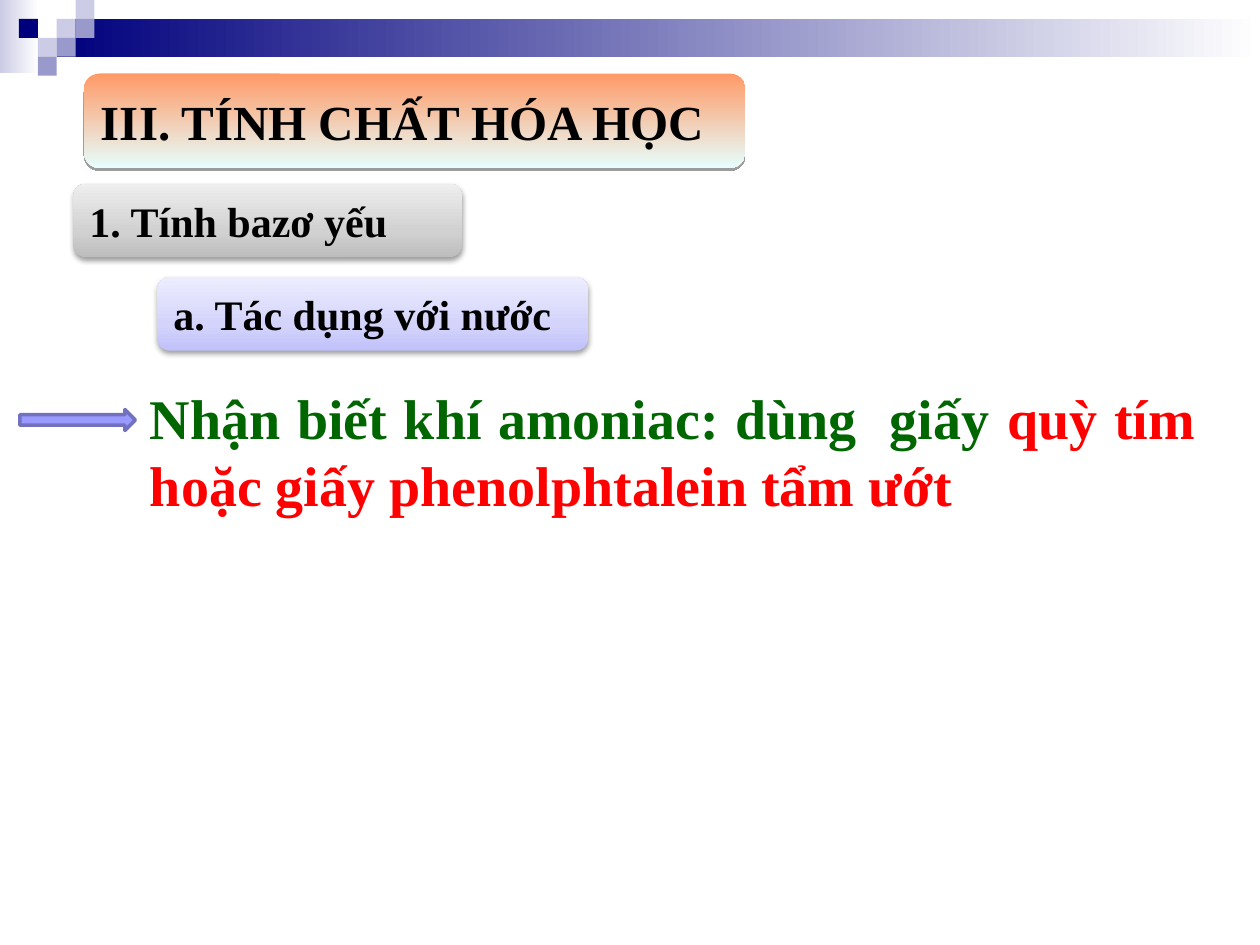
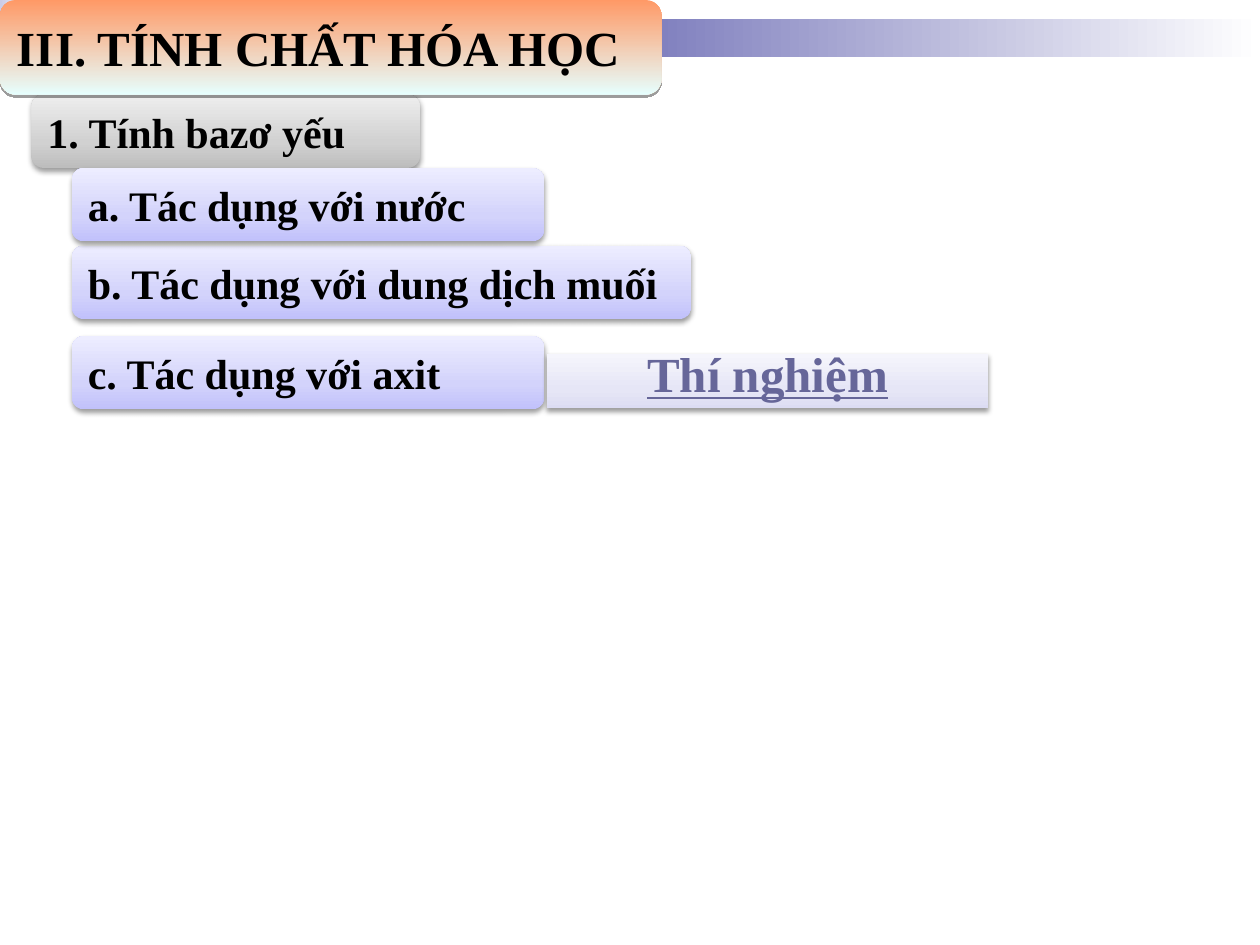
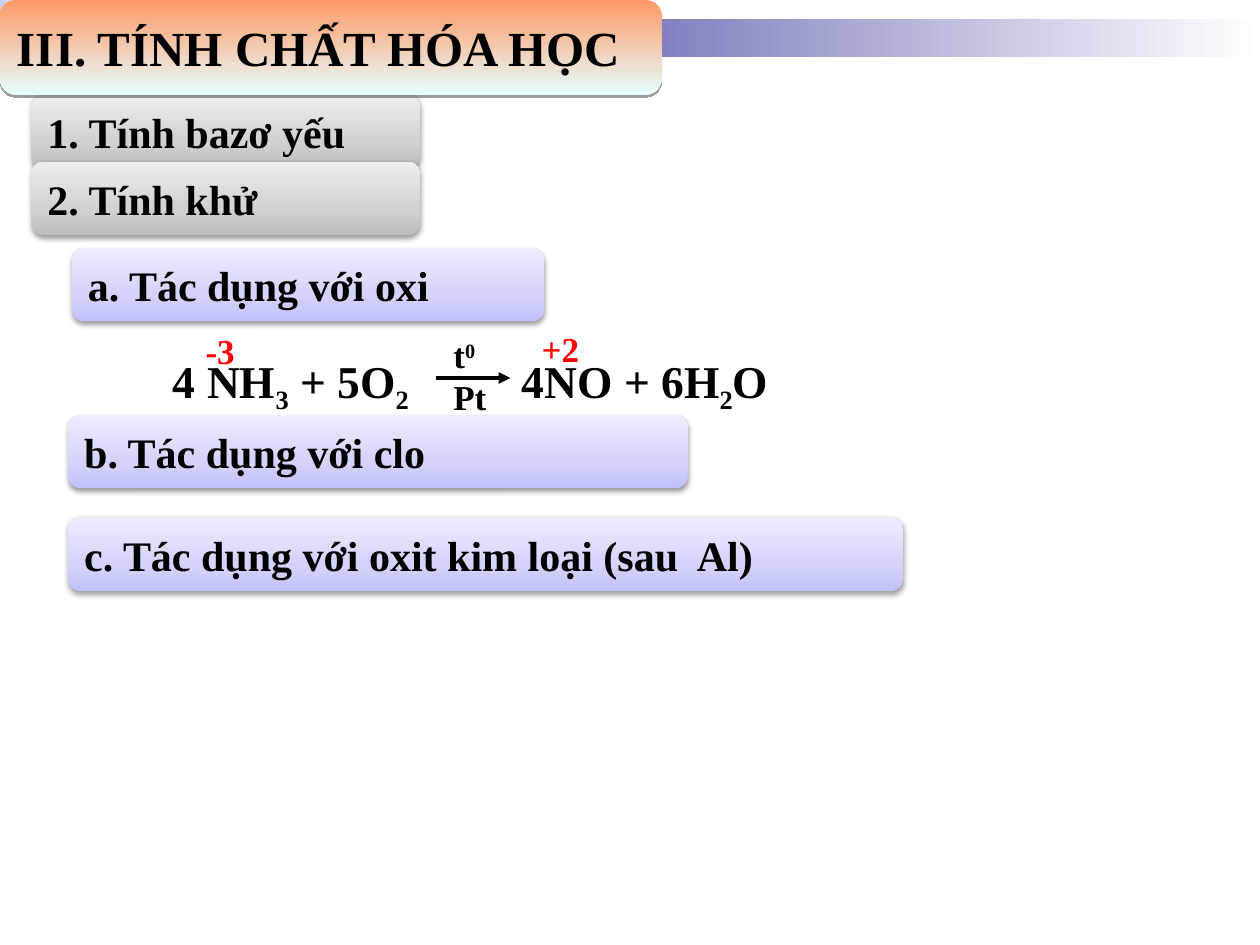
from dataclasses import dataclass

from pptx import Presentation
from pptx import util as u
from pptx.dml.color import RGBColor
from pptx.enum import shapes, text
from pptx.oxml import parse_xml
from pptx.oxml.ns import nsdecls, qn


@dataclass(frozen=True)
class Theme:
    font = "Times New Roman"
    black, red, green = "000000", "FF0000", "006600"
    navy, lilac, violet, slate = "00007D", "CCCCE6", "9999CC", "666699"
    arrow, arrow_edge = "9999FF", "7171BD"
    fade = [(0, lilac), (100, "FFFFFF")]
    band = [(0, navy), (100, "FFFFFF")]
    chapter = [(0, "FF9966"), (100, "E6FEFD")]
    section = [(0, "BDBDBD"), (35, "D1D1D1"), (100, "EEEEEE")]
    topic = [(0, "C1C1FB"), (35, "D3D3FB"), (100, "EDEDFF")]
    experiment = [(0, "DCDCF3"), (35, "E6E6F6"), (100, "F5F5FC")]
    chapter_size, section_size = 28, 24
    statement_size, equation_size, note_size = 32, 26, 20


theme = Theme()
deck = Presentation()
deck.slide_width, deck.slide_height = u.Inches(10), u.Inches(7.5)
column, row = deck.slide_width / 120, deck.slide_height / 90
rect = shapes.MSO_SHAPE.RECTANGLE
rounded = shapes.MSO_SHAPE.ROUNDED_RECTANGLE
middle, bottom = text.MSO_ANCHOR.MIDDLE, text.MSO_ANCHOR.BOTTOM
left, center, justify = text.PP_ALIGN.LEFT, text.PP_ALIGN.CENTER, text.PP_ALIGN.JUSTIFY

styles = {
    "chapter": dict(form=rounded, stops=theme.chapter, angle=90, blur=0, size=theme.chapter_size),
    "section": dict(form=rounded, stops=theme.section, angle=270, blur=3.1, size=theme.section_size),
    "topic": dict(form=rounded, stops=theme.topic, angle=270, blur=3.1, size=theme.section_size),
    "experiment": dict(form=rect, stops=theme.experiment, angle=270, blur=3.1,
                       size=theme.chapter_size, anchor=bottom, align=center,
                       color=theme.slate, underline=True),
    "fade": dict(form=rect, stops=theme.fade, angle=0),
    "band": dict(form=rect, stops=theme.band, angle=0),
    "statement": dict(size=theme.statement_size, align=justify),
    "equation": dict(size=theme.equation_size),
    "note": dict(size=theme.note_size),
}


def write(frame, paragraphs, style):
    frame.word_wrap = True
    for index, runs in enumerate(paragraphs):
        paragraph = frame.paragraphs[0] if index == 0 else frame.add_paragraph()
        paragraph.alignment = style.get("align", left)
        for words, color, baseline in runs:
            run = paragraph.add_run()
            run.text = words
            look = dict(name=theme.font, size=u.Pt(style["size"]), bold=True,
                        underline=style.get("underline"))
            for attribute, value in look.items():
                setattr(run.font, attribute, value)
            run.font.color.rgb = RGBColor.from_string(color)
            if baseline:
                run.font._element.set("baseline", str(baseline * 1000))


def place(slide, kind, box, content=None):
    style = styles[kind]
    x, y, width, height = box
    area = [u.Emu(round(v)) for v in (x * column, y * row, width * column, height * row)]
    if "form" in style:
        part = slide.shapes.add_shape(style["form"], *area)
        part.line.fill.background()
        part.shadow.inherit = False
        stops = "".join(f'<a:gs pos="{at * 1000}"><a:srgbClr val="{color}"/></a:gs>'
                        for at, color in style["stops"])
        properties = part._element.spPr
        properties.find(qn("a:prstGeom")).addnext(parse_xml(
            f'<a:gradFill {nsdecls("a")} rotWithShape="1"><a:gsLst>{stops}</a:gsLst>'
            f'<a:lin ang="{style["angle"] * 60000}" scaled="0"/></a:gradFill>'))
        if "blur" in style:
            properties.find(qn("a:effectLst")).append(parse_xml(
                f'<a:outerShdw {nsdecls("a")} blurRad="{u.Pt(style["blur"])}" '
                f'dist="{u.Pt(1.6)}" dir="5400000" rotWithShape="0">'
                f'<a:srgbClr val="{theme.black}"><a:alpha val="38000"/></a:srgbClr></a:outerShdw>'))
        part.text_frame.vertical_anchor = style.get("anchor", middle)
    else:
        part = slide.shapes.add_textbox(*area)
    if isinstance(content, str):
        content = [[(content, style.get("color", theme.black), 0)]]
    if content:
        write(part.text_frame, content, style)
    return part


chapter_title = "III. TÍNH CHẤT HÓA HỌC"
weak_base = "1. Tính bazơ yếu"
with_water = "a. Tác dụng với nước"
outlines = [
    [("topic", (15, 26.4, 41, 7), with_water),
     ("section", (7, 17.5, 37, 7), weak_base),
     ("chapter", (8, 7, 63, 9), chapter_title)],
    [("topic", (6.84, 23.4, 59, 7), "b. Tác dụng với dung dịch muối"),
     ("section", (3, 9, 37, 7), weak_base),
     ("chapter", (0, 0, 63, 9), chapter_title),
     ("topic", (6.84, 16, 45, 7), with_water),
     ("topic", (6.84, 32, 45, 7), "c. Tác dụng với axit"),
     ("experiment", (52.1, 33.7, 42, 5.2), "Thí nghiệm")],
    [("section", (3, 9, 37, 7), weak_base),
     ("chapter", (0, 0, 63, 9), chapter_title),
     ("section", (3, 15.4, 37, 7), "2. Tính khử"),
     ("topic", (6.5, 39.5, 59, 7), "b. Tác dụng với clo"),
     ("topic", (6.84, 23.6, 45, 7), "a. Tác dụng với oxi"),
     ("topic", (6.5, 49.3, 79.5, 7), "c. Tác dụng với oxit kim loại (sau  Al)")],
]

tile = 1.8
tiles = [(3, 1, theme.lilac), (4, 0, theme.lilac), (4, 1, theme.violet),
         (2, 2, theme.lilac), (1, 1, theme.navy), (3, 2, theme.violet), (2, 3, theme.violet)]
slides = []
for outline in outlines:
    slide = deck.slides.add_slide(deck.slide_layouts[6])
    slides.append(slide)
    place(slide, "fade", (0, 0, 3.7, 7))
    place(slide, "band", (3 * tile, tile, 120 - 3 * tile, 2 * tile))
    for across, down, color in tiles:
        square = slide.shapes.add_shape(
            rect, *[u.Emu(round(v)) for v in (across * tile * column, down * tile * row,
                                              tile * column, tile * row)])
        square.fill.solid()
        square.fill.fore_color.rgb = RGBColor.from_string(color)
        square.line.fill.background()
        square.shadow.inherit = False
    for kind, box, words in outline:
        place(slide, kind, box, words)

recognition, _, reduction = slides
place(recognition, "statement", (13.1, 35.9, 101.9, 14.2), [[
    ("Nhận biết khí amoniac: dùng  giấy ", theme.green, 0),
    ("quỳ tím hoặc giấy phenolphtalein tẩm ướt", theme.red, 0)]])
pointer = recognition.shapes.add_shape(
    shapes.MSO_SHAPE.RIGHT_ARROW,
    *[u.Emu(round(v)) for v in (1.9 * column, 39 * row, 11 * column, 2 * row)])
pointer.fill.solid()
pointer.fill.fore_color.rgb = RGBColor.from_string(theme.arrow)
pointer.line.color.rgb = RGBColor.from_string(theme.arrow_edge)
pointer.line.width = u.Pt(2)
pointer.shadow.inherit = False

formula = [("\t4 NH", 0), ("3", -25), (" + 5O", 0), ("2", -25),
           ("\t4NO + 6H", 0), ("2", -25), ("O", 0)]
equation = place(reduction, "equation", (11, 33, 66, 6.5),
                 [[(words, theme.black, baseline) for words, baseline in formula]])
tabs = "".join(f'<a:tab pos="{round(stop * column)}" algn="l"/>' for stop in (4.3, 37.5))
equation.text_frame.paragraphs[0]._p.get_or_add_pPr().append(
    parse_xml(f'<a:tabLst {nsdecls("a")}>{tabs}</a:tabLst>'))

reaction = reduction.shapes.add_connector(
    shapes.MSO_CONNECTOR.STRAIGHT,
    *[u.Emu(round(v)) for v in (41.5 * column, 36 * row, 48.6 * column, 36 * row)])
reaction.line.color.rgb = RGBColor.from_string(theme.black)
reaction.line.width = u.Pt(2.25)
reaction.line._get_or_add_ln().append(parse_xml(f'<a:tailEnd {nsdecls("a")} type="triangle"/>'))
reaction._element.spPr.append(parse_xml(f'<a:effectLst {nsdecls("a")}/>'))

for box, oxidation in [((18.4, 30.8, 8.2, 5.3), "-3"), ((50.4, 30.6, 7.1, 5.3), "+2")]:
    place(reduction, "note", box, [[(oxidation, theme.red, 0)]])
place(reduction, "note", (42, 31.2, 8.2, 9.2),
      [[("t", theme.black, 0), ("0", theme.black, 30)], [("Pt", theme.black, 0)]])

deck.save("out.pptx")
